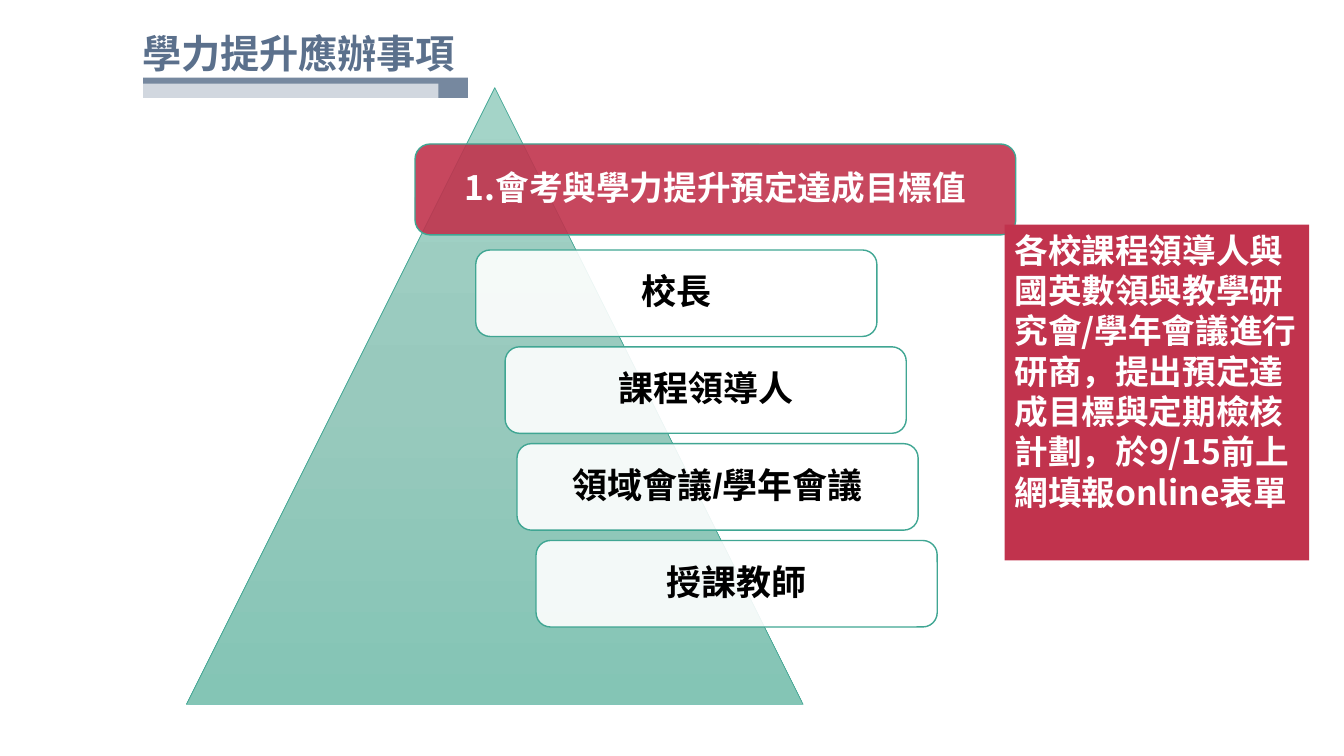
from copy import deepcopy
from dataclasses import dataclass
from typing import Optional

from lxml.etree import SubElement
from pptx import Presentation
from pptx.dml.color import RGBColor
from pptx.enum.shapes import MSO_SHAPE as Preset
from pptx.enum.text import MSO_ANCHOR as Anchor, PP_ALIGN as Align
from pptx.oxml.ns import qn
from pptx.util import Cm, Pt

CJK_FONT = "Noto Sans CJK SC"
SLATE, RED, GREEN, WHITE, BLACK = "5B708C", "C1334D", "40A693", "FFFFFF", "000000"


@dataclass
class Label:
    text: str
    size: float
    color: str
    font: str = CJK_FONT
    align: Align = Align.CENTER
    anchor: Anchor = Anchor.MIDDLE
    spacing: float = 0.9


@dataclass
class Block:
    left: float
    top: float
    width: float
    height: float
    fill: str
    opacity: int = 100
    preset: Preset = Preset.RECTANGLE
    line_width: float = 0
    label: Optional[Label] = None


def rgb(color: str) -> RGBColor:
    return RGBColor.from_string(color)


def write(box, label: Label) -> None:
    frame = box.text_frame
    frame.word_wrap = True
    frame.vertical_anchor = label.anchor
    para = frame.paragraphs[0]
    para.text = label.text
    para.alignment = label.align
    para.line_spacing = label.spacing
    font = para.font
    font.name, font.size, font.bold = label.font, Pt(label.size), True
    font.color.rgb = rgb(label.color)
    # East Asian typeface
    properties = para._p.pPr.find(qn("a:defRPr"))
    SubElement(properties, qn("a:ea")).set("typeface", CJK_FONT)


def draw(page, block: Block):
    shape = page.shapes.add_shape(block.preset, Cm(block.left), Cm(block.top),
                                  Cm(block.width), Cm(block.height))
    shape.shadow.inherit = False
    shape.fill.solid()
    shape.fill.fore_color.rgb = rgb(block.fill)
    if block.opacity < 100:
        color = shape._element.spPr.find(qn("a:solidFill"))[0]
        SubElement(color, qn("a:alpha")).set("val", str(block.opacity * 1000))
    if block.line_width:
        shape.line.color.rgb = rgb(GREEN)
        shape.line.width = Pt(block.line_width)
    else:
        shape.line.fill.background()
    if block.label:
        write(shape, block.label)
    return shape


def shade(shape, start: str, middle: str, end: str) -> None:
    """Fill a shape with a three-colour gradient from top to bottom."""
    shape.fill.gradient()
    shape.fill.gradient_angle = 270
    stops = shape._element.spPr.find(qn("a:gradFill")).find(qn("a:gsLst"))
    stops.insert(1, deepcopy(stops[0]))
    for stop, color, position in zip(shape.fill.gradient_stops,
                                     (start, middle, end), (0, 0.5, 1)):
        stop.color.rgb = rgb(color)
        stop.position = position


def main() -> None:
    deck = Presentation()
    deck.slide_width, deck.slide_height = Cm(33.87), Cm(19.05)
    page = deck.slides.add_slide(deck.slide_layouts[6])

    # Title and its underline
    title = page.shapes.add_textbox(Cm(3.33), Cm(0.36), Cm(9.91), Cm(1.7))
    write(title, Label("學力提升應辦事項", 28, SLATE, "Arial", Align.LEFT, spacing=1.2))
    draw(page, Block(3.61, 1.96, 8.18, 0.51, SLATE, 83))
    draw(page, Block(3.61, 2.11, 7.44, 0.43, WHITE, 67))

    # Pyramid
    pyramid = draw(page, Block(4.7, 2.21, 15.54, 15.54, GREEN,
                               preset=Preset.ISOSCELES_TRIANGLE, line_width=0.5))
    shade(pyramid, "A4D4C8", "98C9BD", "84C5B5")

    # Goal banner
    draw(page, Block(10.46, 3.63, 15.14, 2.29, RED, 90, Preset.ROUNDED_RECTANGLE, 1,
                     Label("1.會考與學力提升預定達成目標值", 24, WHITE)))

    # People and meetings, from top to bottom
    roles = [(11.99, "校長", CJK_FONT), (12.73, "課程領導人", CJK_FONT),
             (13.03, "領域會議/學年會議", "Arial"), (13.51, "授課教師", "Arial")]
    for row, (left, text, font) in enumerate(roles):
        draw(page, Block(left, 6.3 + 2.44 * row, 10.11, 2.18, WHITE, 90,
                         Preset.ROUNDED_RECTANGLE, 1, Label(text, 25, BLACK, font)))

    # Side note
    note = ("各校課程領導人與國英數領與教學研究會/學年會議進行研商，"
            "提出預定達成目標與定期檢核計劃，於9/15前上網填報online表單")
    draw(page, Block(25.32, 5.66, 7.67, 8.46, RED,
                     label=Label(note, 24, WHITE, align=Align.LEFT,
                                 anchor=Anchor.TOP, spacing=1.0)))

    deck.save("out.pptx")


if __name__ == "__main__":
    main()
